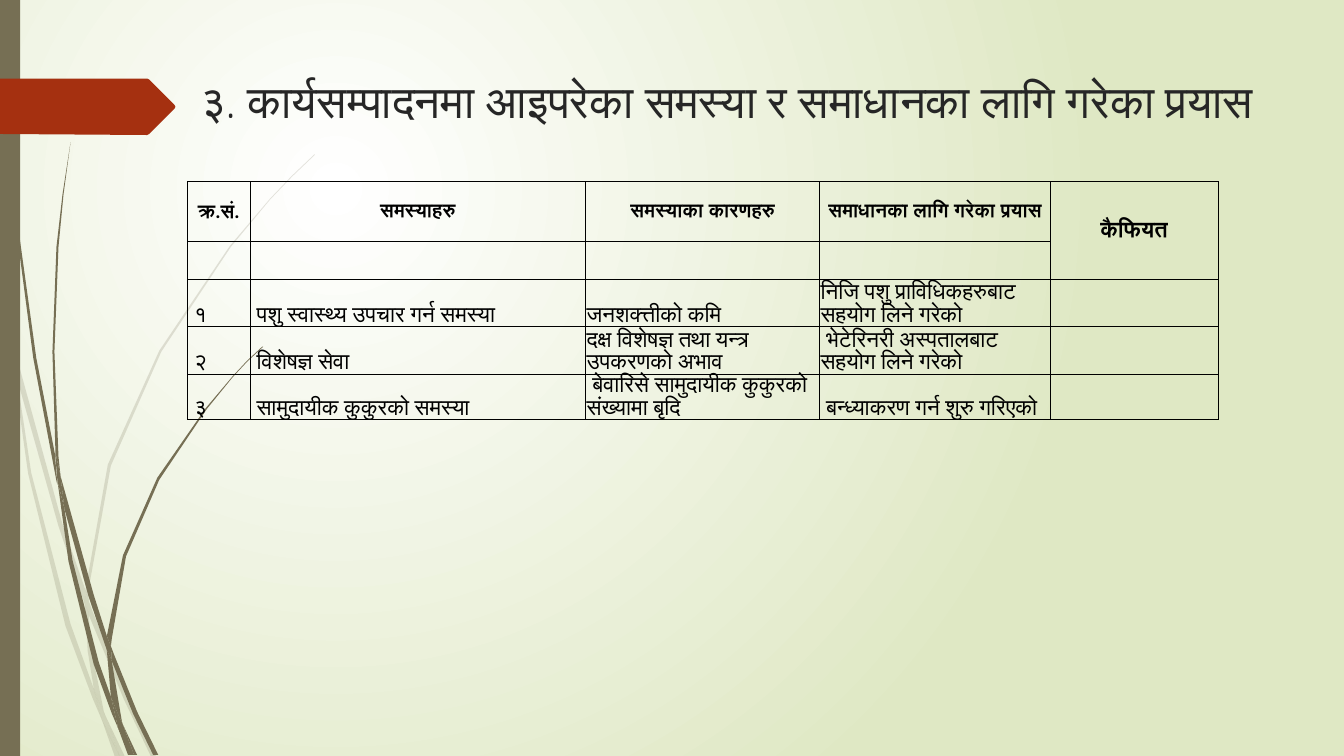
from lxml.etree import SubElement
from pptx import Presentation
from pptx.dml.color import RGBColor
from pptx.enum.shapes import MSO_SHAPE
from pptx.enum.text import MSO_ANCHOR, PP_ALIGN
from pptx.oxml.ns import qn
from pptx.util import Inches, Pt


def rgb(value):
    return RGBColor.from_string(value)


def polygon(s, points, color, alpha=100):
    corners = [(Inches(x), Inches(y)) for x, y in points]
    builder = s.shapes.build_freeform(*corners[0], scale=1)
    builder.add_line_segments(corners[1:], close=True)
    sp = builder.convert_to_shape()
    sp.shadow.inherit = False
    sp.fill.solid()
    sp.fill.fore_color.rgb = rgb(color)
    sp.line.fill.background()
    if alpha < 100:
        srgb = sp.element.spPr.find(".//" + qn("a:srgbClr"))
        SubElement(srgb, qn("a:alpha"), val=str(alpha * 1000))


OLIVE, RUST = "766F54", "A53010"

prs = Presentation()
prs.slide_width, prs.slide_height = Inches(13.33), Inches(7.5)
s = prs.slides.add_slide(prs.slide_layouts[5])

bg = s.background.fill
bg.gradient()
for stop, color in zip(bg.gradient_stops, ("FFFFFF", "DFE8C4")):
    stop.color.rgb = rgb(color)
grad = s.element.find(".//" + qn("a:gradFill"))
grad.remove(grad.find(qn("a:lin")))
circle = SubElement(grad, qn("a:path"), {"path": "circle"})
SubElement(circle, qn("a:fillToRect"), l="50000", t="50000", r="100000", b="100000")

pale_grass = [
    [(0.11, 3.5), (0.09, 3.22), (0, 2.82), (0, 2.99), (0.1, 3.44)],
    [(0.58, 5.22), (0.84, 5.99), (0.85, 5.86), (0.62, 5.2), (0.14, 3.45), (0.17, 3.76)],
    [(0.92, 6.07), (0.88, 5.96), (0.88, 6.1), (1.23, 6.94), (1.5, 7.51), (1.55, 7.51),
     (1.27, 6.92)],
    [(1.19, 7.51), (1.24, 7.51), (1.05, 7.11)],
    [(0.93, 6.83), (0.7, 6.19), (0.31, 4.69), (0.17, 3.76), (0.11, 3.5), (0.28, 4.7),
     (0.65, 6.21), (0.92, 6.93), (1.01, 7.14), (0.99, 7.07)],
    [(0.84, 5.99), (0.87, 6.46), (0.93, 6.83), (0.96, 6.92), (1.05, 7.11), (1.03, 7.06),
     (0.91, 6.46), (0.88, 6.1), (0.88, 6.08)],
    [(0.88, 5.84), (1.1, 4.62), (1.6, 3.49), (2.29, 2.45), (2.68, 1.98), (2.9, 1.75),
     (3.12, 1.54), (3.12, 1.53), (2.89, 1.75), (2.68, 1.97), (2.28, 2.44), (1.58, 3.48),
     (1.07, 4.61), (0.85, 5.84), (0.85, 5.86), (0.88, 5.96)],
    [(1.01, 7.14), (1.14, 7.51), (1.19, 7.51)],
    [(0.88, 6.08), (0.88, 6.1), (0.88, 5.96), (0.85, 5.86), (0.84, 5.99)],
    [(0.96, 6.92), (0.93, 6.83), (0.99, 7.07), (1.01, 7.14), (1.19, 7.51), (1.05, 7.11)],
]
dark_grass = [
    [(0.07, 1.1), (0.17, 2.33), (0.33, 3.55), (0.56, 4.77), (0.57, 4.81), (0.55, 4.57),
     (0.55, 4.53), (0.36, 3.55), (0.19, 2.32), (0.08, 1.09), (0.05, 0.48), (0.04, 0),
     (0.03, 0), (0.04, 0.48)],
    [(0.88, 5.92), (1.06, 6.45), (1.06, 6.33), (1.06, 6.31), (0.93, 5.9), (0.6, 4.72),
     (0.64, 5.05)],
    [(1.13, 6.49), (1.1, 6.41), (1.11, 6.56), (1.32, 7.08), (1.52, 7.49), (1.57, 7.49),
     (1.36, 7.06)],
    [(1.1, 6.91), (0.98, 6.57), (0.72, 5.56), (0.64, 5.05), (0.57, 4.77), (0.68, 5.57),
     (0.93, 6.59), (1.11, 7.08), (1.17, 7.22), (1.16, 7.17)],
    [(0.6, 4.72), (0.58, 4.53), (0.54, 3.49), (0.58, 2.45), (0.63, 1.93), (0.7, 1.41),
     (0.62, 1.93), (0.56, 2.45), (0.52, 3.49), (0.55, 4.49)],
    [(1.33, 7.49), (1.36, 7.49), (1.22, 7.19)],
    [(0.57, 4.77), (0.64, 5.05), (0.6, 4.72), (0.55, 4.49), (0.55, 4.53)],
    [(1.11, 6.33), (1.25, 5.52), (1.58, 4.76), (2.05, 4.06), (2.31, 3.74), (2.45, 3.59),
     (2.61, 3.44), (2.6, 3.44), (2.45, 3.58), (2.31, 3.73), (2.04, 4.05), (1.56, 4.74),
     (1.22, 5.51), (1.06, 6.31), (1.1, 6.41)],
    [(1.17, 7.22), (1.27, 7.49), (1.31, 7.49)],
    [(1.06, 6.45), (1.1, 6.91), (1.16, 7.06), (1.22, 7.19), (1.21, 7.16), (1.11, 6.56),
     (1.09, 6.51)],
    [(1.06, 6.45), (1.09, 6.51), (1.11, 6.56), (1.1, 6.41), (1.06, 6.31), (1.06, 6.33)],
    [(1.16, 7.06), (1.1, 6.91), (1.16, 7.17), (1.17, 7.22), (1.3, 7.49), (1.33, 7.49),
     (1.22, 7.19)],
]
for blades, alpha in ((pale_grass, 20), (dark_grass, 100)):
    for blade in blades:
        polygon(s, blade, OLIVE, alpha)

rail = s.shapes.add_shape(MSO_SHAPE.RECTANGLE, 0, 0, Inches(0.2), Inches(7.5))
rail.shadow.inherit = False
rail.fill.solid()
rail.fill.fore_color.rgb = rgb(OLIVE)
rail.line.fill.background()

arrow = [(0, 0.78), (1.46, 0.78), (1.48, 0.79), (1.73, 1.04), (1.74, 1.06),
         (1.73, 1.08), (1.48, 1.33), (1.46, 1.34), (0, 1.33)]
polygon(s, arrow, RUST)

title = s.shapes.title
box = {"left": 1.89, "top": 0.68, "width": 10.69, "height": 0.91}
for name, value in box.items():
    setattr(title, name, Inches(value))
tf = title.text_frame
tf.word_wrap = True
tf.vertical_anchor = MSO_ANCHOR.TOP
p = tf.paragraphs[0]
p.alignment = PP_ALIGN.LEFT
r = p.add_run()
r.text = "३. कार्यसम्पादनमा आइपरेका समस्या र समाधानका लागि गरेका प्रयास"
r.font.size, r.font.name = Pt(32.4), "Quicksand"
r.font.color.rgb = rgb("262626")

rows = [
    ["क्र.सं.", "समस्याहरु", "समस्याका कारणहरु", "समाधानका लागि गरेका प्रयास", "कैफियत"],
    [""] * 5,
    [" १", " पशु स्वास्थ्य उपचार गर्न समस्या", "जनशक्त्तीको कमि",
     "निजि पशु प्राविधिकहरुबाट सहयोग लिने गरेको", ""],
    [" २", " विशेषज्ञ सेवा", "दक्ष विशेषज्ञ तथा यन्त्र उपकरणको अभाव",
     " भेटेरिनरी अस्पतालबाट सहयोग लिने गरेको", ""],
    [" ३", " सामुदायीक कुकुरको समस्या", " बेवारिसे सामुदायीक कुकुरको संख्यामा बृदि",
     " बन्ध्याकरण गर्न शुरु गरिएको", ""],
]
widths = [0.62, 3.33, 2.32, 2.29, 1.66]
heights = [0.59, 0.38, 0.47, 0.47, 0.42]
margins = {"margin_left": 0.01, "margin_right": 0.01, "margin_top": 0.01, "margin_bottom": 0}

table = s.shapes.add_table(len(rows), len(widths), Inches(1.86), Inches(1.8),
                           Inches(sum(widths)), Inches(sum(heights))).table
table.first_row = table.horz_banding = False
for column, width in zip(table.columns, widths):
    column.width = Inches(width)
for row, height in zip(table.rows, heights):
    row.height = Inches(height)

for i, texts in enumerate(rows):
    for j, text in enumerate(texts):
        cell = table.cell(i, j)
        for name, value in margins.items():
            setattr(cell, name, Inches(value))
        header = i == 0
        cell.vertical_anchor = MSO_ANCHOR.MIDDLE if header else MSO_ANCHOR.BOTTOM
        tcPr = cell._tc.get_or_add_tcPr()
        for side in ("a:lnL", "a:lnR", "a:lnT", "a:lnB"):
            ln = SubElement(tcPr, qn(side), w=str(Pt(0.5)))
            SubElement(SubElement(ln, qn("a:solidFill")), qn("a:srgbClr"), val="000000")
        cell.fill.background()
        if text:
            p = cell.text_frame.paragraphs[0]
            p.alignment = PP_ALIGN.CENTER if header else PP_ALIGN.LEFT
            r = p.add_run()
            r.text = text
            font = {"name": "Calibri", "bold": header,
                    "size": Pt(14 if header and j < 4 else 16)}
            for name, value in font.items():
                setattr(r.font, name, value)
            r.font.color.rgb = rgb("000000")
table.cell(0, 4).merge(table.cell(1, 4))

prs.save("out.pptx")
